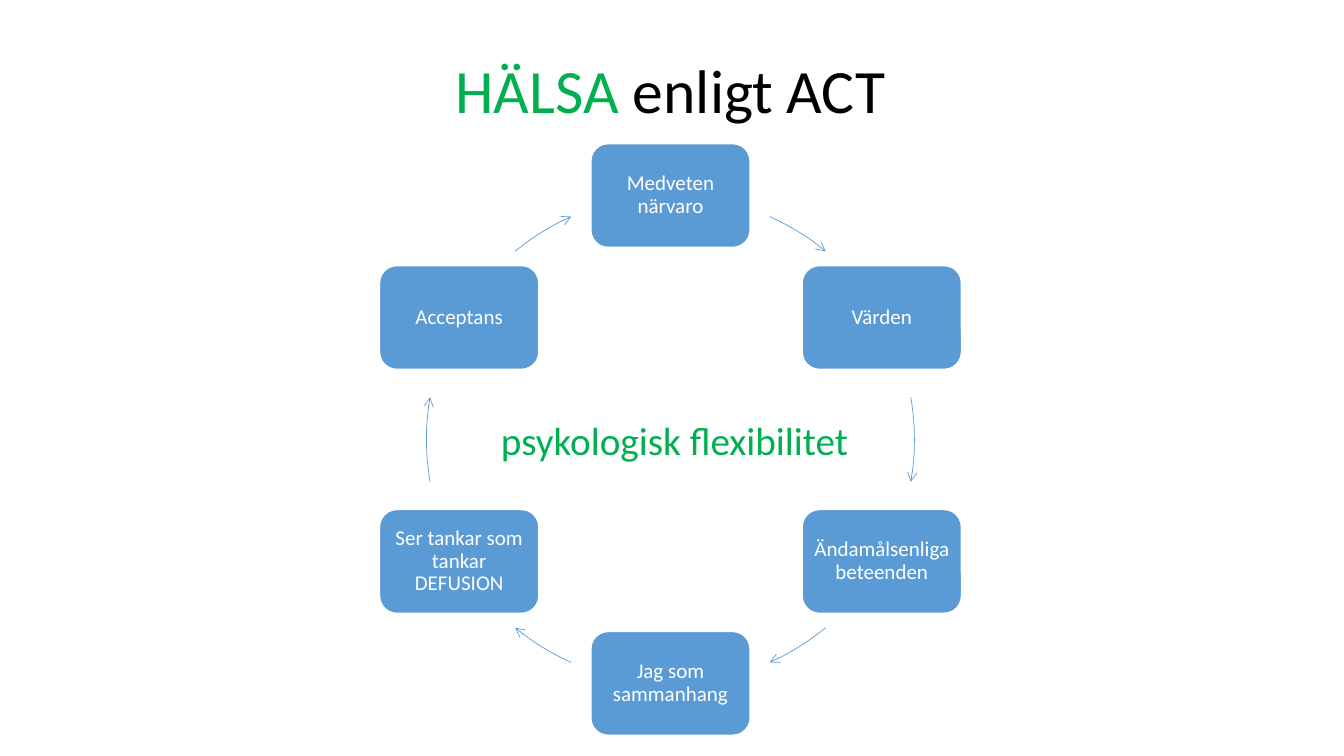
import math

from lxml import etree
from pptx import Presentation
from pptx.dml.color import RGBColor
from pptx.enum.shapes import MSO_SHAPE
from pptx.enum.text import MSO_ANCHOR, MSO_AUTO_SIZE, PP_ALIGN
from pptx.oxml.ns import qn
from pptx.util import Pt

ROUNDED, ARC = MSO_SHAPE.ROUNDED_RECTANGLE, MSO_SHAPE.ARC
MIDDLE, TOP = MSO_ANCHOR.MIDDLE, MSO_ANCHOR.TOP
CENTER, LEFT = PP_ALIGN.CENTER, PP_ALIGN.LEFT
GROW = MSO_AUTO_SIZE.SHAPE_TO_FIT_TEXT

GREEN = RGBColor(0x00, 0xB0, 0x50)
BLUE = RGBColor(0x5B, 0x9B, 0xD5)
WHITE = RGBColor(0xFF, 0xFF, 0xFF)
BLACK = RGBColor(0x00, 0x00, 0x00)
FONT = "Calibri"

# Lengths are in px, 100 to the inch
PX = 9144
SLIDE_W, SLIDE_H = 1333, 750
CYCLE_X, CYCLE_Y, RADIUS = 665, 436, 242
# The rounded corners add about 5 px to the inset on each side
BOX_W, BOX_H, BOX_INSET = 158, 103, 5

# Clockwise from the top
PROCESSES = [
    "Medveten närvaro",
    "Värden",
    "Ändamålsenliga beteenden",
    "Jag som sammanhang",
    "Ser tankar som tankar DEFUSION",
    "Acceptans",
]
# Start and end of each arrow, in degrees clockwise from the top
RIGHT_ARROWS = [(24, 39.5), (80, 100), (140.5, 156)]
ARROWS = RIGHT_ARROWS + [(start + 180, end + 180) for start, end in RIGHT_ARROWS]


def px(*lengths):
    return [round(length * PX) for length in lengths]


def write(frame, runs, size, align=CENTER, spacing=0.9, **frame_format):
    """Fill a text frame with one paragraph of (text, colour) runs."""
    for name, value in frame_format.items():
        setattr(frame, name, value)
    paragraph = frame.paragraphs[0]
    paragraph.alignment = align
    paragraph.line_spacing = spacing
    for text, color in runs:
        run = paragraph.add_run()
        run.text = text
        run.font.name = FONT
        run.font.size = Pt(size)
        run.font.color.rgb = color


def add_text(slide, box, runs, size, **text_format):
    label = slide.shapes.add_textbox(*px(*box))
    write(label.text_frame, runs, size, **text_format)


def add_process(slide, text, angle):
    center_x = CYCLE_X + RADIUS * math.sin(angle)
    center_y = CYCLE_Y - RADIUS * math.cos(angle)
    process = slide.shapes.add_shape(
        ROUNDED, *px(center_x - BOX_W / 2, center_y - BOX_H / 2, BOX_W, BOX_H))
    process.shadow.inherit = False
    process.fill.solid()
    process.fill.fore_color.rgb = BLUE
    process.line.color.rgb = WHITE
    process.line.width = Pt(1)
    sides = ("left", "top", "right", "bottom")
    insets = {f"margin_{side}": BOX_INSET * PX for side in sides}
    write(process.text_frame, [(text, WHITE)], 15,
          word_wrap=True, vertical_anchor=MIDDLE, **insets)


def add_cycle_arrow(slide, start, end):
    arrow = slide.shapes.add_shape(
        ARC, *px(CYCLE_X - RADIUS, CYCLE_Y - RADIUS, 2 * RADIUS, 2 * RADIUS))
    # An arc counts from the right, in units of 1/0.6 degree
    for index, angle in enumerate((start, end)):
        arrow.adjustments[index] = (angle - 90) % 360 * 0.6
    arrow.shadow.inherit = False
    arrow.fill.background()
    arrow.line.color.rgb = BLUE
    arrow.line.width = Pt(0.5)
    etree.SubElement(arrow.line._get_or_add_ln(), qn("a:tailEnd"), type="arrow")


def main():
    prs = Presentation()
    prs.slide_width, prs.slide_height = px(SLIDE_W, SLIDE_H)
    slide = prs.slides.add_slide(prs.slide_layouts[6])

    # Title
    add_text(slide, (90, 20, 1150, 145),
             [("HÄLSA ", GREEN), ("enligt ACT", BLACK)], 44,
             word_wrap=True, vertical_anchor=MIDDLE)

    # Cycle of processes
    step = math.tau / len(PROCESSES)
    for index, (text, arrow) in enumerate(zip(PROCESSES, ARROWS)):
        add_process(slide, text, index * step)
        add_cycle_arrow(slide, *arrow)

    # Centre of the cycle
    add_text(slide, (487, 408, 381, 57), [("psykologisk flexibilitet", GREEN)], 28,
             align=LEFT, spacing=1.0, word_wrap=False, vertical_anchor=TOP,
             auto_size=GROW)

    prs.save("out.pptx")


if __name__ == "__main__":
    main()
